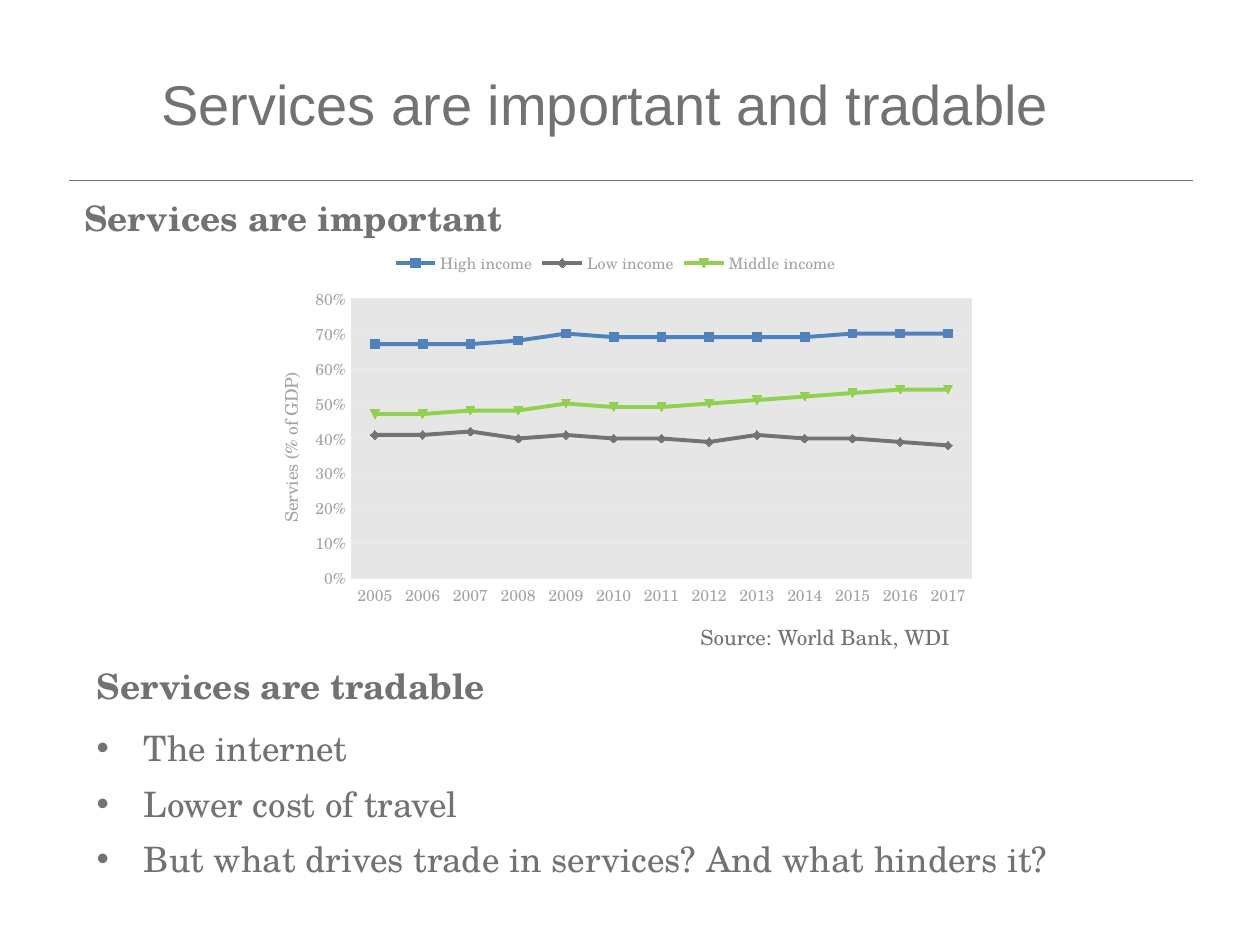
from lxml import etree
from pptx import Presentation
from pptx.chart.data import CategoryChartData
from pptx.dml.color import RGBColor
from pptx.enum.chart import XL_CHART_TYPE as ChartType
from pptx.enum.chart import XL_LEGEND_POSITION as LegendPosition
from pptx.enum.chart import XL_TICK_MARK as TickMark
from pptx.enum.shapes import MSO_CONNECTOR as Connector
from pptx.enum.text import MSO_ANCHOR as Anchor
from pptx.oxml import parse_xml
from pptx.oxml.ns import nsdecls, qn
from pptx.util import Cm, Pt

GREY = RGBColor(0x72, 0x72, 0x72)
LIGHT_GREY = RGBColor(0xA3, 0xA3, 0xA3)
GRID_GREY = RGBColor(0xEA, 0xEA, 0xEA)
PLOT_GREY = RGBColor(0xE6, 0xE6, 0xE6)
BLUE = RGBColor(0x4F, 0x81, 0xBD)
DARK_GREY = RGBColor(0x73, 0x73, 0x73)
GREEN = RGBColor(0x92, 0xD0, 0x50)

SERIF = "TeX Gyre Schola"
SANS = "Arial"

YEARS = [str(year) for year in range(2005, 2018)]
SERIES = [
    ("High income", BLUE,
     [.67, .67, .67, .68, .70, .69, .69, .69, .69, .69, .70, .70, .70]),
    ("Low income", DARK_GREY,
     [.41, .41, .42, .40, .41, .40, .40, .39, .41, .40, .40, .39, .38]),
    ("Middle income", GREEN,
     [.47, .47, .48, .48, .50, .49, .49, .50, .51, .52, .53, .54, .54]),
]


def style_font(font, size=20, color=GREY, name=SERIF, bold=False):
    font.size, font.name, font.bold = Pt(size), name, bold
    font.color.rgb = color


def write_para(para, text, bullet=False, **style):
    if bullet:
        props = para._p.get_or_add_pPr()
        props.set("marL", str(Cm(0.95)))
        props.set("indent", str(Cm(-0.95)))
        etree.SubElement(props, qn("a:buFont")).set("typeface", SANS)
        etree.SubElement(props, qn("a:buChar")).set("char", "•")
    span = para.add_run()
    span.text = text
    style_font(span.font, **style)


def set_layout(parent, index, **values):
    """Place a chart part by fractions of the chart area."""
    for old in parent.findall(qn("c:layout")):
        parent.remove(old)
    layout = parse_xml(f"<c:layout {nsdecls('c')}><c:manualLayout/></c:layout>")
    for tag, value in values.items():
        etree.SubElement(layout[0], qn(f"c:{tag}")).set("val", str(value))
    parent.insert(index, layout)


class SlideBuilder:
    def __init__(self, page):
        self.page = page

    def text(self, place, lines, anchor=Anchor.TOP, **style):
        box = self.page.shapes.add_textbox(*map(Cm, place))
        frame = box.text_frame
        frame.word_wrap = True
        frame.vertical_anchor = anchor
        for number, line in enumerate(lines):
            para = frame.add_paragraph() if number else frame.paragraphs[0]
            if number:
                para.space_before = Pt(7.7)
            write_para(para, line, **style)

    def rule(self, left, right, top):
        line = self.page.shapes.add_connector(
            Connector.STRAIGHT, Cm(left), Cm(top), Cm(right), Cm(top))
        line.line.color.rgb = GREY
        line.line.width = Pt(0.5)
        etree.SubElement(line._element.spPr, qn("a:effectLst"))

    def line_chart(self, place, categories, series, axis_title):
        data = CategoryChartData(number_format="0%")
        data.categories = categories
        for name, _, values in series:
            data.add_series(name, values)
        chart = self.page.shapes.add_chart(
            ChartType.LINE, *map(Cm, place), data).chart
        style_font(chart.font, size=10)
        chart.has_title = False

        # Legend
        chart.has_legend = True
        chart.legend.position = LegendPosition.TOP
        chart.legend.include_in_layout = False
        style_font(chart.legend.font, size=9, color=LIGHT_GREY)

        # Lines
        chart.plots[0].vary_by_categories = False
        for item, (_, color, _) in zip(chart.plots[0].series, series):
            item.smooth = False
            item.format.line.color.rgb = color
            item.format.line.width = Pt(2.25)
            item.marker.style = None
            item.marker.format.fill.background()

        # Axes
        years, shares = chart.category_axis, chart.value_axis
        for axis in (years, shares):
            axis.major_tick_mark = axis.minor_tick_mark = TickMark.NONE
            style_font(axis.tick_labels.font, size=9, color=LIGHT_GREY)
        shares.minimum_scale, shares.maximum_scale = 0, 0.8
        shares.major_unit = 0.1
        shares.tick_labels.number_format = "0%"
        shares.tick_labels.number_format_is_linked = False
        shares.format.line.fill.background()
        for line in (years.format.line, shares.major_gridlines.format.line):
            line.color.rgb = GRID_GREY
            line.width = Pt(0.75)

        # Value axis title
        frame = shares.axis_title.text_frame
        frame._txBody.bodyPr.set("rot", "-5400000")
        frame._txBody.bodyPr.set("vert", "horz")
        write_para(frame.paragraphs[0], axis_title, size=10, color=LIGHT_GREY)
        set_layout(shares.axis_title._element, 1,
                   xMode="edge", yMode="edge", x=0.04, y=0.35)

        # Plot area
        area = chart._chartSpace.chart.plotArea
        set_layout(area, 0, layoutTarget="inner", xMode="edge", yMode="edge",
                   x=0.145, y=0.163, w=0.834, h=0.74)
        area.append(parse_xml(
            f"<c:spPr {nsdecls('c', 'a')}><a:solidFill>"
            f'<a:srgbClr val="{PLOT_GREY}"/></a:solidFill></c:spPr>'))


def main():
    deck = Presentation()
    deck.slide_width, deck.slide_height = Cm(25.4), Cm(19.05)
    builder = SlideBuilder(deck.slides.add_slide(deck.slide_layouts[6]))

    # Title
    builder.rule(1.4, 24.05, 3.63)
    builder.text((3, 0.66, 20.6, 2.84), ["Services are important and tradable"],
                 anchor=Anchor.MIDDLE, size=32, name=SANS)

    # Importance of services
    builder.text((1.45, 3.53, 11.23, 1.4), ["Services are important"],
                 anchor=Anchor.BOTTOM, bold=True)
    builder.line_chart((4.9, 4.78, 15.01, 7.62), YEARS, SERIES,
                       "Servies (% of GDP)")
    builder.text((13.87, 12.47, 6.1, 0.76), ["Source: World Bank, WDI"], size=12)

    # Tradability of services
    builder.text((1.7, 12.8, 11.23, 1.57), ["Services are tradable"],
                 anchor=Anchor.BOTTOM, bold=True)
    builder.text((1.7, 14.53, 21.41, 4.19), [
        "The internet",
        "Lower cost of travel",
        "But what drives trade in services? And what hinders it?",
    ], bullet=True)

    deck.save("out.pptx")


if __name__ == "__main__":
    main()
